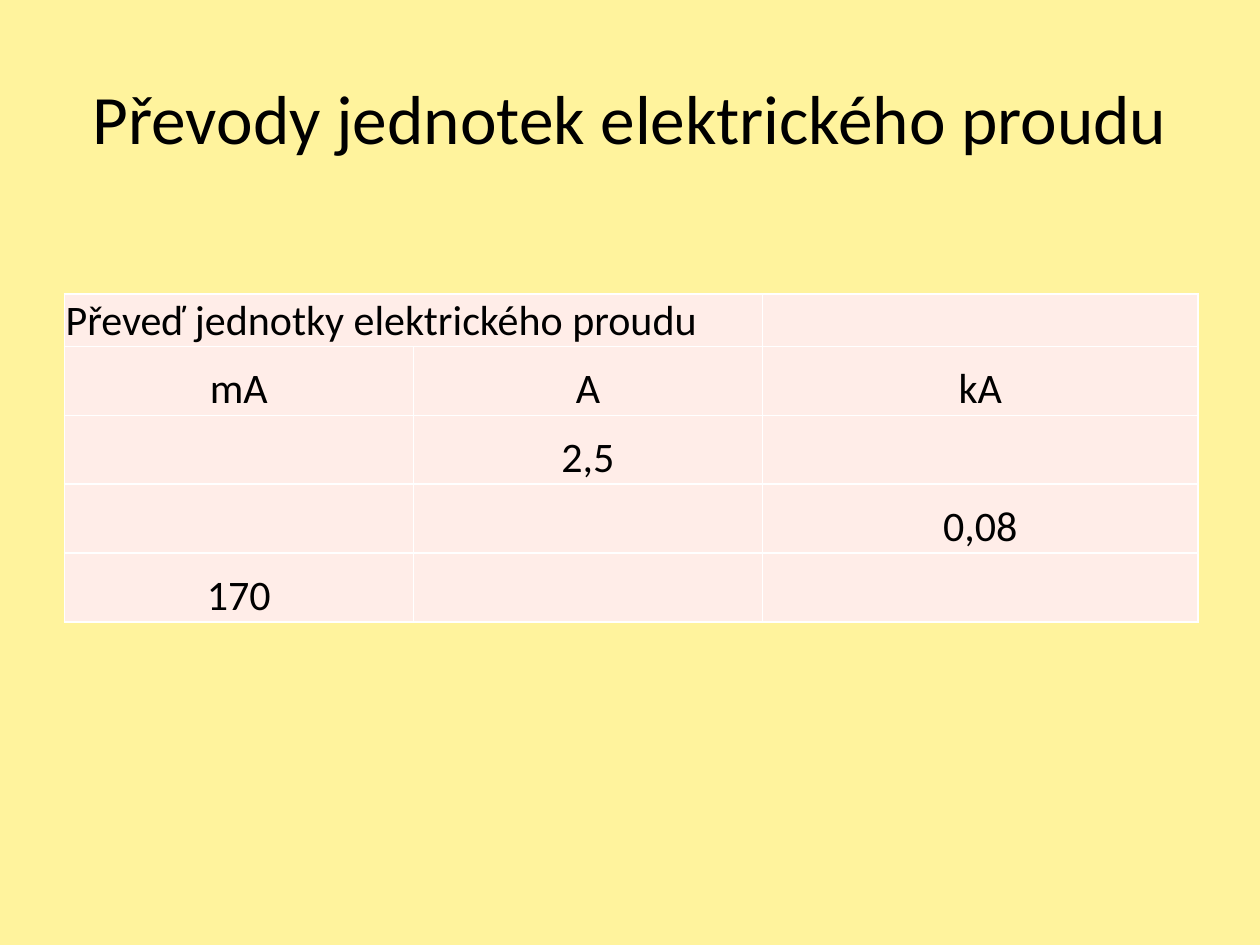
from dataclasses import dataclass

from lxml.etree import SubElement
from pptx import Presentation
from pptx.dml.color import RGBColor
from pptx.enum.text import MSO_ANCHOR, PP_ALIGN
from pptx.oxml.ns import qn
from pptx.util import Pt


@dataclass(frozen=True)
class Theme:
    font: str = "Calibri"
    background: str = "FFF39D"
    text: str = "000000"
    cell: str = "FFEDE8"
    border: str = "FFFFFF"
    title_size: float = 39.6
    table_size: float = 24


THEME = Theme()
COLUMN_WIDTHS = (199.5, 199.5, 249)
ROW_HEIGHTS = (25.2, 39.4, 39.4, 39.4, 39.4)
ROWS = (
    ("Převeď jednotky elektrického proudu", "", ""),
    ("mA", "A", "kA"),
    ("", "2,5", ""),
    ("", "", "0,08"),
    ("170", "", ""),
)


def paint(fill, color):
    fill.solid()
    fill.fore_color.rgb = RGBColor.from_string(color)


def write(frame, text, size, alignment):
    frame.text = text
    para = frame.paragraphs[0]
    para.alignment = alignment
    for span in para.runs:
        span.font.name = THEME.font
        span.font.size = Pt(size)
        span.font.bold = False
        span.font.color.rgb = RGBColor.from_string(THEME.text)


def add_title(page, text):
    title = page.shapes.title
    title.left, title.top, title.width, title.height = Pt(36), Pt(21.6), Pt(648), Pt(90)
    title.text_frame.vertical_anchor = MSO_ANCHOR.MIDDLE
    write(title.text_frame, text, THEME.title_size, PP_ALIGN.CENTER)


def add_borders(cell):
    properties = cell._tc.get_or_add_tcPr()
    for position, side in enumerate(("a:lnL", "a:lnR", "a:lnT", "a:lnB")):
        line = SubElement(properties, qn(side), w=str(Pt(1)))
        properties.insert(position, line)
        fill = SubElement(line, qn("a:solidFill"))
        SubElement(fill, qn("a:srgbClr"), val=THEME.border)


def format_cell(cell, text, alignment):
    cell.margin_left = cell.margin_right = cell.margin_top = Pt(0.75)
    cell.margin_bottom = Pt(0)
    cell.vertical_anchor = MSO_ANCHOR.BOTTOM
    paint(cell.fill, THEME.cell)
    add_borders(cell)
    write(cell.text_frame, text, THEME.table_size, alignment)


def add_unit_table(page):
    frame = page.shapes.add_table(
        len(ROWS), len(COLUMN_WIDTHS), Pt(36.75), Pt(167.9),
        Pt(sum(COLUMN_WIDTHS)), Pt(sum(ROW_HEIGHTS)),
    )
    table = frame.table
    table.first_row = table.horz_banding = False
    for column, width in zip(table.columns, COLUMN_WIDTHS):
        column.width = Pt(width)
    for row, height in zip(table.rows, ROW_HEIGHTS):
        row.height = Pt(height)
    for row_index, values in enumerate(ROWS):
        alignment = PP_ALIGN.CENTER if row_index else PP_ALIGN.LEFT
        for column_index, text in enumerate(values):
            format_cell(table.cell(row_index, column_index), text, alignment)
    table.cell(0, 0).merge(table.cell(0, 1))


def main():
    deck = Presentation()
    deck.slide_width, deck.slide_height = Pt(720), Pt(540)
    page = deck.slides.add_slide(deck.slide_layouts.get_by_name("Title Only"))
    paint(page.background.fill, THEME.background)
    add_title(page, "Převody jednotek elektrického proudu")
    add_unit_table(page)
    deck.save("out.pptx")


if __name__ == "__main__":
    main()
